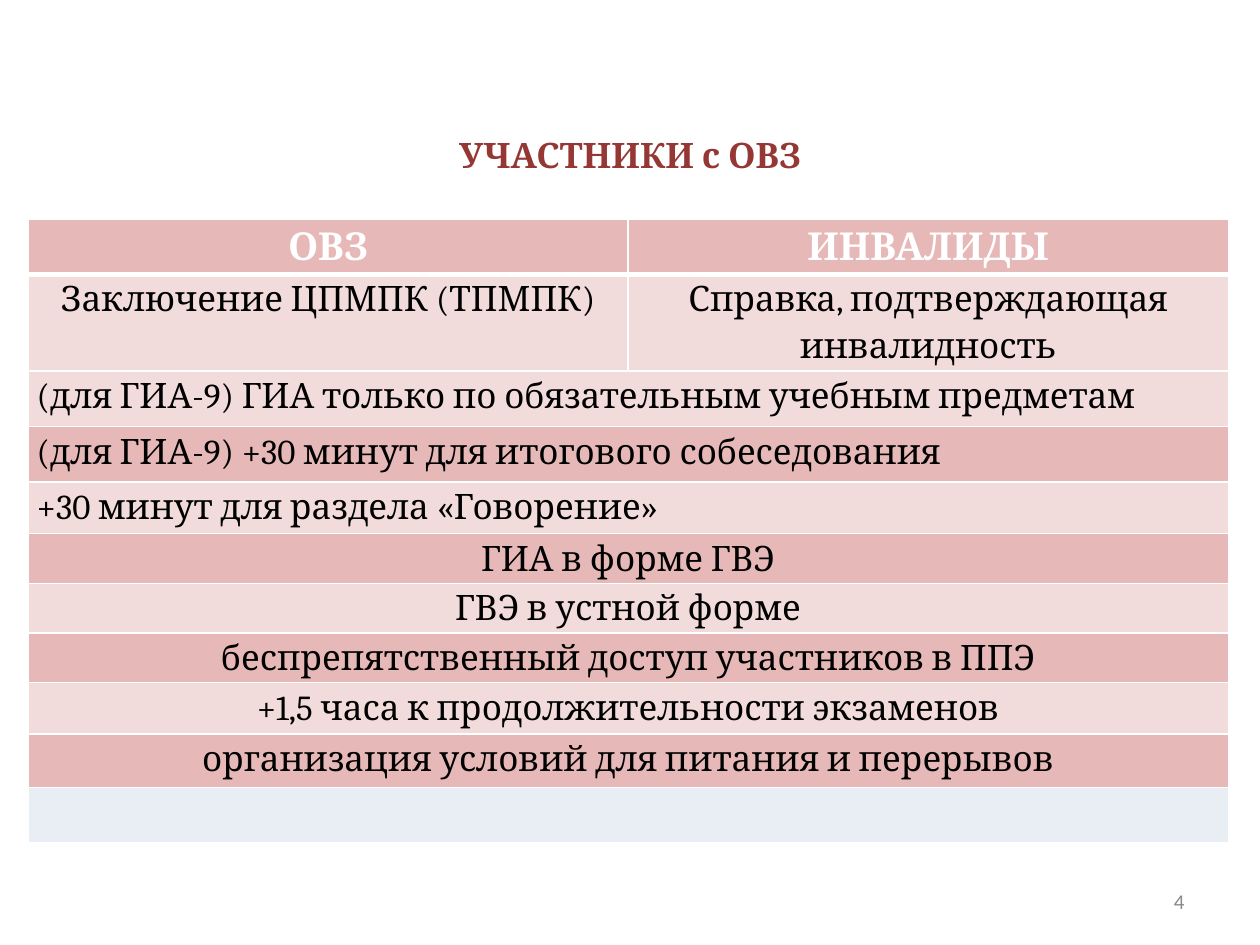
from lxml.etree import SubElement
from pptx import Presentation
from pptx.dml.color import RGBColor
from pptx.enum.text import MSO_ANCHOR as Anchor, PP_ALIGN as Align
from pptx.oxml.ns import qn
from pptx.util import Cm, Pt

ROSE, BLUSH, PALE, WHITE, BLACK = "E6B9B8", "F2DCDB", "E9EDF4", "FFFFFF", "000000"
GROUPS = ["ОВЗ", "ИНВАЛИДЫ"]
DOCUMENTS = ["Заключение ЦПМПК (ТПМПК)", "Справка, подтверждающая инвалидность"]
EXAM_RULES = [
    "(для ГИА-9) ГИА только по обязательным учебным предметам",
    "(для ГИА-9) +30 минут для итогового собеседования",
    "+30 минут для раздела «Говорение»",
]
CONDITIONS = [
    "ГИА в форме ГВЭ",
    "ГВЭ в устной форме",
    "беспрепятственный доступ участников в ППЭ",
    "+1,5 часа к продолжительности экзаменов",
    "организация условий для питания и перерывов",
]
ROW_HEIGHTS = [1.11, 1.78, 1.12, 1.12, 1.04, 1, 1, 1, 1.04, 1.08, 1.11]


def color(value):
    """Turn a hex string into a colour."""
    return RGBColor.from_string(value)


def write(paragraph, text, align, size, hue, face="Cambria", bold=False):
    """Fill a paragraph with styled text."""
    paragraph.text = text
    paragraph.alignment = align
    font = paragraph.font
    font.name, font.size, font.bold = face, Pt(size), bold
    font.color.rgb = color(hue)


def add_line(slide, box, *style, **options):
    """Place one vertically centred line of text in the box."""
    frame = slide.shapes.add_textbox(*map(Cm, box)).text_frame
    frame.word_wrap = True
    frame.vertical_anchor = Anchor.MIDDLE
    write(frame.paragraphs[0], *style, **options)


def paint_cell(cell, fill, bottom=1, top=1):
    """Fill a cell and give it white borders with widths in points."""
    cell.fill.solid()
    cell.fill.fore_color.rgb = color(fill)
    properties = cell._tc.get_or_add_tcPr()
    for index, (side, width) in enumerate(zip("LRTB", (1, 1, top, bottom))):
        border = SubElement(properties, qn(f"a:ln{side}"), w=str(Pt(width)))
        solid = SubElement(border, qn("a:solidFill"))
        SubElement(solid, qn("a:srgbClr"), val=WHITE)
        properties.insert(index, border)


def write_cell(cell, text, align=Align.CENTER, size=20, hue=BLACK, bold=False):
    """Write a cell's text with tight margins and loose line spacing."""
    cell.margin_left = cell.margin_right = Cm(0.18)
    cell.margin_top = cell.margin_bottom = 0
    paragraph = cell.text_frame.paragraphs[0]
    write(paragraph, text, align, size, hue, bold=bold)
    paragraph.line_spacing = 1.15


def add_conditions_table(slide, left, top, width):
    """Place the table of participant groups and their exam conditions."""
    frame = slide.shapes.add_table(
        len(ROW_HEIGHTS), 2, Cm(left), Cm(top), Cm(width), Cm(sum(ROW_HEIGHTS)))
    table = frame.table
    for row, height in zip(table.rows, ROW_HEIGHTS):
        row.height = Cm(height)

    shared = [(text, Align.LEFT) for text in EXAM_RULES]
    shared += [(text, Align.CENTER) for text in CONDITIONS]
    fills = [ROSE, BLUSH] + [(BLUSH, ROSE)[i % 2] for i in range(len(shared))] + [PALE]
    for index, fill in enumerate(fills):
        for column in range(2):
            paint_cell(table.cell(index, column), fill,
                       bottom=3 if index == 0 else 1, top=3 if index == 1 else 1)
    for column, (group, document) in enumerate(zip(GROUPS, DOCUMENTS)):
        write_cell(table.cell(0, column), group, size=22, hue=WHITE, bold=True)
        write_cell(table.cell(1, column), document)
    for index in range(2, len(fills)):
        table.cell(index, 0).merge(table.cell(index, 1))
    for index, (text, align) in enumerate(shared, start=2):
        write_cell(table.cell(index, 0), text, align)


def main():
    """Build the slide and save it."""
    deck = Presentation()
    deck.slide_width, deck.slide_height = Cm(25.4), Cm(19.05)
    slide = deck.slides.add_slide(deck.slide_layouts[6])
    add_line(slide, (0, 2.57, 25.4, 1.09), "УЧАСТНИКИ с ОВЗ",
             Align.CENTER, 20, "953735", bold=True)
    add_conditions_table(slide, 0.56, 4.42, 24.2)
    add_line(slide, (18.2, 17.66, 5.93, 1.01), "4",
             Align.RIGHT, 12, "898989", face="Calibri")
    deck.save("out.pptx")


if __name__ == "__main__":
    main()
